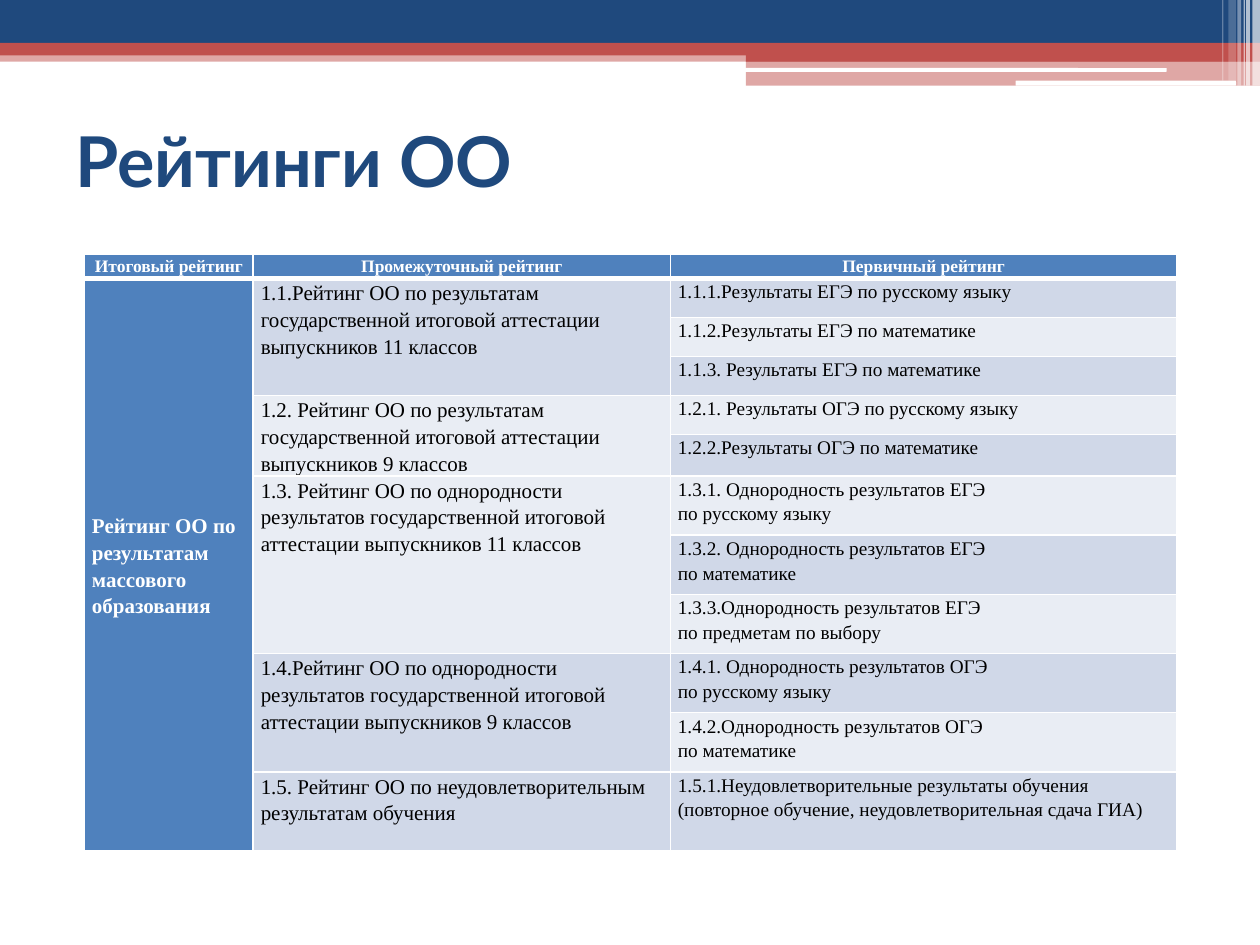
from lxml.etree import SubElement
from pptx import Presentation
from pptx.dml.color import RGBColor
from pptx.enum.shapes import MSO_SHAPE
from pptx.enum.text import MSO_ANCHOR, PP_ALIGN
from pptx.oxml import parse_xml
from pptx.oxml.ns import nsdecls, qn
from pptx.util import Inches, Pt

NAVY, RED, BLUE, WHITE, BLACK = "1F497D", "C0504D", "4F81BD", "FFFFFF", "000000"
BANDS = ("E9EDF4", "D0D8E8")

# left, top, width, height, colour, opacity in percent
STRIPES = [
    (0, 0.4, 10, 0.09, RED, 50),
    (0, 0, 10, 0.34, NAVY, 100),
    (0, 0.34, 10, 0.1, RED, 100),
    (5.92, 0.39, 4.08, 0.1, RED, 100),
    (5.92, 0.48, 4.08, 0.2, RED, 50),
]
WHITE_BARS = [(5.91, 0.54, 3.35, 0.03), (8.06, 0.64, 1.75, 0.04)]
# left, width, height, opacity in percent
EDGE_LINES = [
    (9.94, 0.06, 0.68, 65),
    (9.89, 0.03, 0.68, 65),
    (9.87, 0.01, 0.68, 60),
    (9.82, 0.03, 0.68, 40),
    (9.75, 0.06, 0.64, 20),
    (9.7, 0.01, 0.64, 30),
]

HEADERS = ["Итоговый рейтинг", "Промежуточный рейтинг", "Первичный рейтинг"]
FINAL_RATING = "Рейтинг ОО по результатам массового образования"
# intermediate rating, then its primary ratings
GROUPS = [
    ("1.1.Рейтинг ОО по результатам государственной итоговой аттестации выпускников 11 классов",
     ["1.1.1.Результаты ЕГЭ по русскому языку",
      "1.1.2.Результаты ЕГЭ по математике",
      "1.1.3. Результаты ЕГЭ по математике"]),
    ("1.2. Рейтинг ОО по результатам государственной итоговой аттестации выпускников 9 классов",
     ["1.2.1. Результаты ОГЭ по русскому языку",
      "1.2.2.Результаты ОГЭ по математике"]),
    ("1.3. Рейтинг ОО по однородности результатов государственной итоговой аттестации "
     "выпускников 11 классов",
     ["1.3.1. Однородность результатов ЕГЭ \vпо русскому языку",
      "1.3.2. Однородность результатов ЕГЭ \vпо математике",
      "1.3.3.Однородность результатов ЕГЭ \vпо предметам по выбору"]),
    ("1.4.Рейтинг ОО по однородности результатов государственной итоговой аттестации "
     "выпускников 9 классов",
     ["1.4.1. Однородность результатов ОГЭ\vпо русскому языку",
      "1.4.2.Однородность результатов ОГЭ \vпо математике"]),
    ("1.5. Рейтинг ОО по неудовлетворительным результатам обучения",
     ["1.5.1.Неудовлетворительные результаты обучения "
      "(повторное обучение, неудовлетворительная сдача ГИА)"]),
]
COL_WIDTHS = [1.34, 3.31, 4.02]
ROW_HEIGHTS = [0.19] + [0.31] * 5 + [0.47] * 5 + [0.63]


def rgb(color):
    return RGBColor.from_string(color)


class SlideBuilder:
    title_font = "Lato"
    table_font = "Times New Roman"

    def __init__(self, slide):
        self.slide = slide

    def bar(self, x, y, w, h, color, opacity=100, rounded=False):
        kind = MSO_SHAPE.ROUNDED_RECTANGLE if rounded else MSO_SHAPE.RECTANGLE
        s = self.slide.shapes.add_shape(kind, Inches(x), Inches(y), Inches(w), Inches(h))
        s.shadow.inherit = False
        s.line.fill.background()
        s.fill.solid()
        s.fill.fore_color.rgb = rgb(color)
        if opacity < 100:
            clr = s.fill._xPr.find(qn("a:solidFill"))[0]
            SubElement(clr, qn("a:alpha")).set("val", str(opacity * 1000))

    def title(self, text, x, y, w, h):
        sp = self.slide.shapes.title
        sp.left, sp.top, sp.width, sp.height = Inches(x), Inches(y), Inches(w), Inches(h)
        tf = sp.text_frame
        tf.text = text
        tf.vertical_anchor = MSO_ANCHOR.MIDDLE
        p = tf.paragraphs[0]
        p.alignment = PP_ALIGN.LEFT
        self.style(p, self.title_font, 40, NAVY, True)

    def style(self, p, name, size, color, bold):
        for font in [p.font] + [r.font for r in p.runs]:
            font.name, font.size, font.bold = name, Pt(size), bold
            font.color.rgb = rgb(color)

    def table(self, x, y, widths, heights):
        frame = self.slide.shapes.add_table(
            len(heights), len(widths), Inches(x), Inches(y),
            Inches(sum(widths)), Inches(sum(heights)))
        table = frame.table
        for column, width in zip(table.columns, widths):
            column.width = Inches(width)
        for row, height in zip(table.rows, heights):
            row.height = Inches(height)
        return table

    def cell(self, cell, text, size, fill, color=BLACK, bold=False,
             align=PP_ALIGN.LEFT, anchor=MSO_ANCHOR.TOP):
        cell.margin_left = cell.margin_right = Inches(0.06)
        cell.margin_top = cell.margin_bottom = 0
        cell.vertical_anchor = anchor
        cell.fill.solid()
        cell.fill.fore_color.rgb = rgb(fill)
        cell.text_frame.text = text
        p = cell.text_frame.paragraphs[0]
        p.alignment = align
        p.line_spacing = 1.15
        self.style(p, self.table_font, size, color, bold)

    def borders(self, cell, bottom=1, top=1):
        widths = {"lnL": 1, "lnR": 1, "lnT": top, "lnB": bottom}
        tc_pr = cell._tc.get_or_add_tcPr()
        for i, (tag, width) in enumerate(widths.items()):
            tc_pr.insert(i, parse_xml(
                f'<a:{tag} {nsdecls("a")} w="{Pt(width)}"><a:solidFill>'
                f'<a:srgbClr val="{WHITE}"/></a:solidFill></a:{tag}>'))


def main():
    prs = Presentation()
    prs.slide_width, prs.slide_height = Inches(10), Inches(7.5)
    b = SlideBuilder(prs.slides.add_slide(prs.slide_layouts[5]))

    for stripe in STRIPES:
        b.bar(*stripe)
    for white_bar in WHITE_BARS:
        b.bar(*white_bar, WHITE, rounded=True)
    for x, w, h, opacity in EDGE_LINES:
        b.bar(x, 0, w, h, WHITE, opacity)
    b.title("Рейтинги ОО", 0.5, 0.68, 9, 1.17)

    table = b.table(0.67, 2.02, COL_WIDTHS, ROW_HEIGHTS)
    for col, header in enumerate(HEADERS):
        b.cell(table.cell(0, col), header, 10, BLUE, WHITE, True, PP_ALIGN.CENTER)
    b.cell(table.cell(1, 0), FINAL_RATING, 12, BLUE, WHITE, True, anchor=MSO_ANCHOR.MIDDLE)
    table.cell(1, 0).merge(table.cell(len(ROW_HEIGHTS) - 1, 0))

    row = 1
    for intermediate, primaries in GROUPS:
        first = table.cell(row, 1)
        b.cell(first, intermediate, 12, BANDS[row % 2])
        if len(primaries) > 1:
            first.merge(table.cell(row + len(primaries) - 1, 1))
        for primary in primaries:
            b.cell(table.cell(row, 2), primary, 11, BANDS[row % 2])
            row += 1

    for r in range(len(ROW_HEIGHTS)):
        for c in range(len(COL_WIDTHS)):
            b.borders(table.cell(r, c), bottom=3 if r == 0 else 1, top=3 if r == 1 else 1)

    prs.save("out.pptx")


if __name__ == "__main__":
    main()
